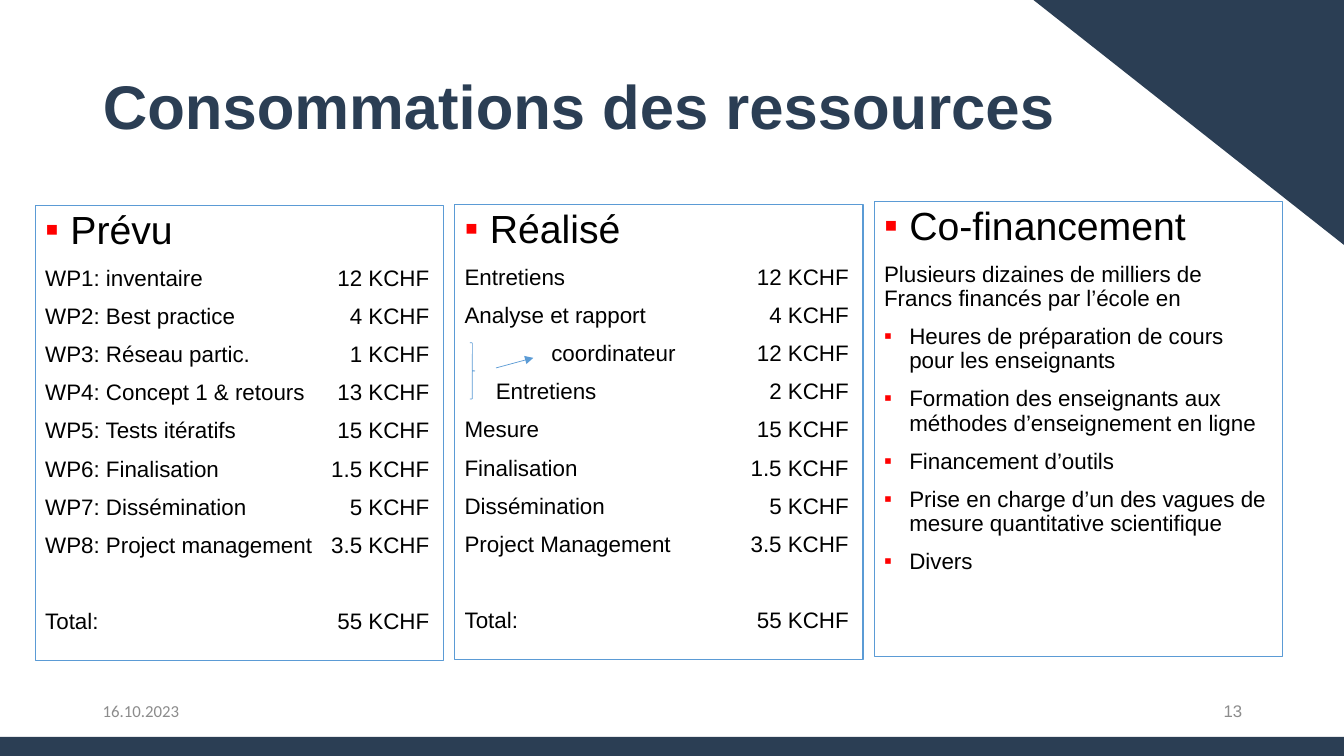
from lxml.etree import SubElement
from pptx import Presentation
from pptx.dml.color import RGBColor
from pptx.enum.shapes import MSO_CONNECTOR as CONNECTOR, MSO_SHAPE as SHAPE
from pptx.enum.text import MSO_ANCHOR as ANCHOR, PP_ALIGN as ALIGN
from pptx.oxml.ns import qn
from pptx.util import Emu, Pt

PX = 9144  # 100 px to the inch
NAVY, BLUE, RED, GREY, BLACK = "2B3E54", "5B9BD5", "FF0000", "8C8C8C", "000000"
LABEL_STOPS, AMOUNT_STOP = (31, 86), 381

PLANNED = [
    "WP1: inventaire\t12 KCHF", "WP2: Best practice\t4 KCHF",
    "WP3: Réseau partic.\t1 KCHF", "WP4: Concept 1 & retours\t13 KCHF",
    "WP5: Tests itératifs\t15 KCHF", "WP6: Finalisation\t1.5 KCHF",
    "WP7: Dissémination\t5 KCHF", "WP8: Project management\t3.5 KCHF",
    "Total:\t55 KCHF",
]
ACTUAL = [
    "Entretiens\t12 KCHF", "Analyse et rapport\t4 KCHF",
    "\tcoordinateur\t12 KCHF", "\tEntretiens\t2 KCHF",
    "Mesure\t15 KCHF", "Finalisation\t1.5 KCHF",
    "Dissémination\t5 KCHF", "Project Management\t3.5 KCHF",
    "Total:\t55 KCHF",
]
FUNDING_INTRO = "Plusieurs dizaines de milliers de Francs financés par l’école en"
FUNDING = [
    "Heures de préparation de cours pour les enseignants",
    "Formation des enseignants aux méthodes d’enseignement en ligne",
    "Financement d’outils",
    "Prise en charge d’un des vagues de mesure quantitative scientifique",
    "Divers",
]


def px(*lengths):
    return [Emu(length * PX) for length in lengths]


def color(value):
    return RGBColor.from_string(value)


def add_run(paragraph, text, size, ink=BLACK, font="Arial", bold=False):
    run = paragraph.add_run()
    run.text = text
    formats = {"name": font, "size": Pt(size), "bold": bold}
    for name, value in formats.items():
        setattr(run.font, name, value)
    run.font.color.rgb = color(ink)


def set_bullet(paragraph):
    properties = paragraph._p.get_or_add_pPr()
    properties.set("marL", str(25 * PX))
    properties.set("indent", str(-25 * PX))
    bullet_color = SubElement(properties, qn("a:buClr"))
    SubElement(bullet_color, qn("a:srgbClr"), val=RED)
    SubElement(properties, qn("a:buFont"), typeface="Arial")
    SubElement(properties, qn("a:buChar"), char="▪")


def set_tabs(paragraph, stops):
    """Add tab stops given as (px, alignment) pairs."""
    tab_list = SubElement(paragraph._p.get_or_add_pPr(), qn("a:tabLst"))
    for position, alignment in stops:
        SubElement(tab_list, qn("a:tab"), pos=str(position * PX), algn=alignment)


def add_column(slide, left, top, heading):
    """Add an outlined box with its bulleted heading and return its text frame."""
    box = slide.shapes.add_textbox(*px(left, top, 405, 451))
    box.line.color.rgb = color(BLUE)
    box.line.width = Pt(0.75)
    frame = box.text_frame
    frame.word_wrap = True
    paragraph = frame.paragraphs[0]
    set_bullet(paragraph)
    paragraph.line_spacing = 0.9
    add_run(paragraph, heading, 28)
    return frame


def add_line(frame, text, bulleted=False, stops=(), space=10):
    paragraph = frame.add_paragraph()
    if bulleted:
        set_bullet(paragraph)
    if stops:
        set_tabs(paragraph, stops)
    paragraph.line_spacing = 0.9
    paragraph.space_before = Pt(space)
    add_run(paragraph, text, 16)


def add_amounts(frame, rows):
    amount = (AMOUNT_STOP, "r")
    for row in rows:
        stops = [amount]
        if row.startswith("\t"):
            indent = LABEL_STOPS["coordinateur" in row]
            stops = [(indent, "l"), amount]
        add_line(frame, row, stops=stops, space=37 if row.startswith("Total") else 10)


def add_footer(slide, left, width, text, font, align):
    frame = slide.shapes.add_textbox(*px(left, 685, width, 40)).text_frame
    frame.word_wrap = True
    frame.vertical_anchor = ANCHOR.MIDDLE
    frame.paragraphs[0].alignment = align
    add_run(frame.paragraphs[0], text, 12, GREY, font)


def add_block(slide, kind, *box, rotation=0):
    shape = slide.shapes.add_shape(kind, *px(*box))
    shape.shadow.inherit = False
    shape.rotation = rotation
    shape.fill.solid()
    shape.fill.fore_color.rgb = color(NAVY)
    shape.line.fill.background()


def add_brace(slide, *box):
    brace = slide.shapes.add_shape(SHAPE.RIGHT_BRACE, *px(*box))
    brace.shadow.inherit = False
    brace.fill.background()
    brace.line.color.rgb = color(BLUE)
    brace.line.width = Pt(0.5)


def add_arrow(slide, *ends):
    arrow = slide.shapes.add_connector(CONNECTOR.STRAIGHT, *px(*ends))
    arrow.line.color.rgb = color(BLUE)
    arrow.line.width = Pt(0.5)
    SubElement(arrow.line._get_or_add_ln(), qn("a:tailEnd"), type="triangle")
    SubElement(arrow._element.spPr, qn("a:effectLst"))


def set_title(slide, text):
    title = slide.shapes.title
    title.left, title.top, title.width, title.height = px(92, 36, 975, 145)
    title.text_frame.vertical_anchor = ANCHOR.MIDDLE
    paragraph = title.text_frame.paragraphs[0]
    paragraph.alignment = ALIGN.LEFT
    paragraph.line_spacing = 0.9
    add_run(paragraph, text, 44, NAVY, bold=True)


def main():
    presentation = Presentation()
    presentation.slide_width, presentation.slide_height = px(1333, 750)
    slide = presentation.slides.add_slide(presentation.slide_layouts[5])

    add_block(slide, SHAPE.RIGHT_TRIANGLE, 1025, 0, 308, 243, rotation=180)
    add_block(slide, SHAPE.RECTANGLE, 0, 731, 1333, 19)
    set_title(slide, "Consommations des ressources")

    add_amounts(add_column(slide, 35, 204, "Prévu"), PLANNED)
    add_amounts(add_column(slide, 451, 203, "Réalisé"), ACTUAL)
    funding = add_column(slide, 867, 200, "Co-financement")
    add_line(funding, FUNDING_INTRO)
    for item in FUNDING:
        add_line(funding, item, bulleted=True)

    add_brace(slide, 466, 340, 5, 56)
    add_arrow(slide, 492, 365, 529, 355)
    add_footer(slide, 92, 299, "16.10.2023", "Calibri", ALIGN.LEFT)
    add_footer(slide, 942, 300, "13", "Arial", ALIGN.RIGHT)
    presentation.save("out.pptx")


if __name__ == "__main__":
    main()
